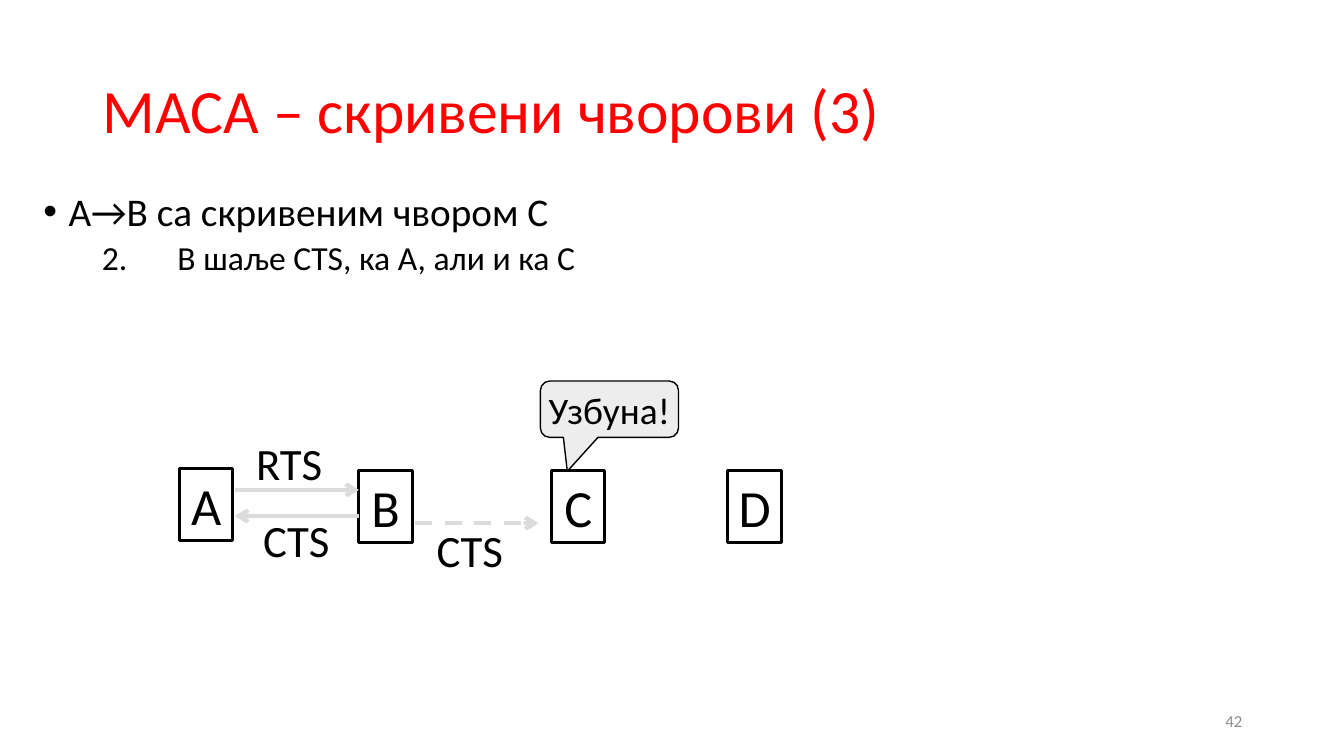
from lxml import etree
from pptx import Presentation, util as u
from pptx.dml.color import RGBColor
from pptx.enum import dml, shapes, text
from pptx.oxml.ns import qn

PX = 9144  # EMU per px, 100 px to the inch
LEFT, CENTER, RIGHT = text.PP_ALIGN.LEFT, text.PP_ALIGN.CENTER, text.PP_ALIGN.RIGHT


def color(hex_string):
    return RGBColor.from_string(hex_string)


class SlideBuilder:
    font = "Calibri"
    black, red, gray, pale, arrow_gray = "000000", "FF0000", "8C8C8C", "EDEDED", "DBDBDB"

    def __init__(self, presentation):
        self.slide = presentation.slides.add_slide(presentation.slide_layouts[1])

    def place(self, shape, box):
        shape.left, shape.top, shape.width, shape.height = (v * PX for v in box)

    def format_paragraph(self, paragraph, size, hex_string=None, align=LEFT):
        paragraph.alignment = align
        for run in paragraph.runs:
            run.font.name = self.font
            run.font.size = u.Pt(size)
            run.font.color.rgb = color(hex_string or self.black)

    def set_frame(self, shape, wrap, anchor, inset=None):
        frame = shape.text_frame
        frame.word_wrap, frame.vertical_anchor = wrap, anchor
        frame.auto_size = text.MSO_AUTO_SIZE.NONE
        if inset is not None:
            frame.margin_left = frame.margin_right = inset[0] * PX
            frame.margin_top = frame.margin_bottom = inset[1] * PX
        return frame

    def title(self, box, words):
        shape = self.slide.shapes.title
        self.place(shape, box)
        frame = self.set_frame(shape, True, text.MSO_ANCHOR.MIDDLE)
        frame.text = words
        frame.paragraphs[0].line_spacing = 0.9
        self.format_paragraph(frame.paragraphs[0], 44, self.red)

    def body(self, box, items):
        shape = self.slide.placeholders[1]
        self.place(shape, box)
        frame = self.set_frame(shape, True, text.MSO_ANCHOR.TOP)
        frame.text = "\n".join(item[0] for item in items)
        for paragraph, (_, level, size, before, margin, indent, bullet) in zip(frame.paragraphs, items):
            paragraph.level = level
            paragraph.line_spacing, paragraph.space_before = 0.9, u.Pt(before)
            self.format_paragraph(paragraph, size)
            properties = paragraph._p.get_or_add_pPr()
            properties.set("marL", str(margin * PX))
            properties.set("indent", str(indent * PX))
            tag, attributes = bullet
            etree.SubElement(properties, qn("a:buFont"), typeface="Arial")
            etree.SubElement(properties, qn(tag), **attributes)

    def label(self, box, words, size, hex_string=None, align=LEFT, anchor=text.MSO_ANCHOR.TOP):
        shape = self.slide.shapes.add_textbox(*(v * PX for v in box))
        frame = self.set_frame(shape, align == RIGHT, anchor, (10, 5) if align == RIGHT else (0, 0))
        frame.text = words
        self.format_paragraph(frame.paragraphs[0], size, hex_string, align)

    def box(self, kind, box, words, size, line_width, fill=None, inset=(0, 5)):
        shape = self.slide.shapes.add_shape(kind, *(v * PX for v in box))
        shape.shadow.inherit = False
        if fill:
            shape.fill.solid()
            shape.fill.fore_color.rgb = color(fill)
        else:
            shape.fill.background()
        shape.line.color.rgb = color(self.black)
        shape.line.width = u.Pt(line_width)
        frame = self.set_frame(shape, False, text.MSO_ANCHOR.MIDDLE, inset)
        frame.text = words
        self.format_paragraph(frame.paragraphs[0], size, align=CENTER)
        return shape

    def arrow(self, start, end, y, dashed=False):
        connector = self.slide.shapes.add_connector(
            shapes.MSO_CONNECTOR.STRAIGHT, start * PX, y * PX, end * PX, y * PX)
        connector.line.color.rgb = color(self.arrow_gray)
        connector.line.width = u.Pt(3)
        if dashed:
            connector.line.dash_style = dml.MSO_LINE.DASH
        etree.SubElement(connector.line._get_or_add_ln(), qn("a:tailEnd"), type="arrow")
        etree.SubElement(connector._element.spPr, qn("a:effectLst"))


def main():
    presentation = Presentation()
    presentation.slide_width, presentation.slide_height = u.Inches(13.33), u.Inches(7.5)
    builder = SlideBuilder(presentation)

    # Title, list and slide number
    builder.title((92, 40, 1150, 145), "MACA – скривени чворови (3)")
    builder.body((33, 186, 833, 489), [
        ("A→B са скривеним чвором C", 0, 28, 10, 25, -25, ("a:buChar", {"char": "•"})),
        ("B шаље CTS, ка A, али и ка C", 1, 24, 5, 133, -75,
         ("a:buAutoNum", {"type": "arabicPeriod", "startAt": "2"})),
    ])
    builder.label((942, 695, 300, 40), "42", 12, builder.gray, RIGHT, text.MSO_ANCHOR.MIDDLE)

    # Network nodes
    for name, left, top in (("A", 178, 465), ("B", 356, 467), ("C", 547, 467), ("D", 722, 467)):
        builder.box(shapes.MSO_SHAPE.RECTANGLE, (left, top, 53, 71), name, 37.3, 2.25)

    # Messages: start, end, height of the arrow, dashed, then label and its corner
    for start, end, y, dashed, words, left, top in (
        (233, 356, 486, False, "RTS", 254, 432),
        (412, 534, 519, True, "CTS", 433, 519),
        (356, 233, 512, False, "CTS", 261, 509),
    ):
        builder.arrow(start, end, y, dashed)
        builder.label((left, top, 67, 54), words, 32)

    # Alarm at the hidden node
    callout = builder.box(shapes.MSO_SHAPE.ROUNDED_RECTANGULAR_CALLOUT, (536, 378, 137, 56),
                          "Узбуна!", 26.7, 1, builder.pale)
    for index, value in enumerate((-0.305, 1.1, 0.167)):
        callout.adjustments[index] = value

    presentation.save("out.pptx")


if __name__ == "__main__":
    main()
